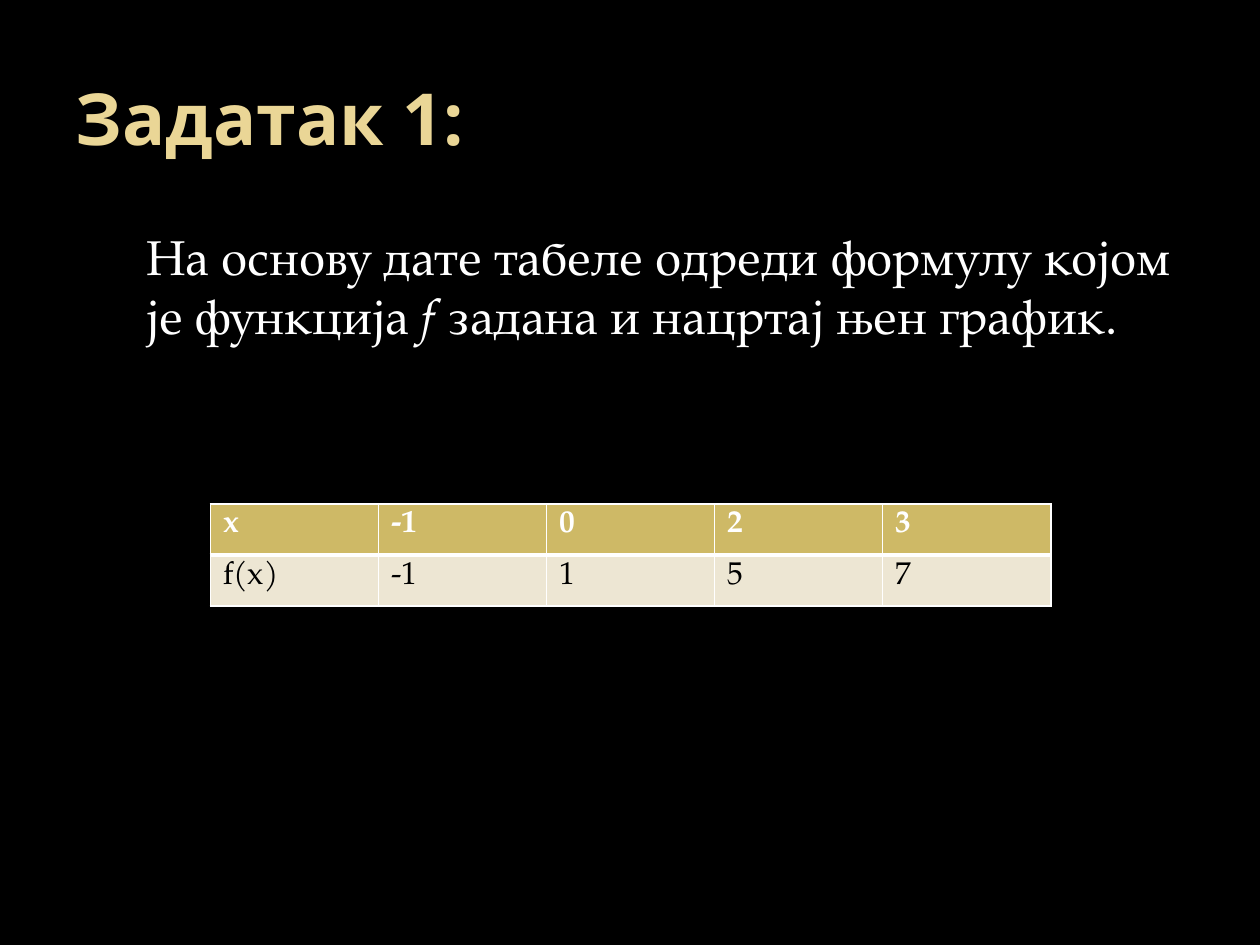
from dataclasses import dataclass

import pptx
import pptx.dml.color
import pptx.enum.text
import pptx.oxml
import pptx.oxml.ns
import pptx.util
from pptx.util import Inches


@dataclass(frozen=True)
class Theme:
    background: str = "000000"
    title: str = "EAD696"
    text: str = "FFFFFF"
    header_fill: str = "CEB966"
    row_fill: str = "EDE6D3"
    row_text: str = "000000"
    border: str = "FFFFFF"
    title_font: str = "Open Sans"
    body_font: str = "TeX Gyre Pagella"
    title_size: float = 41
    body_size: float = 28
    table_size: float = 18
    thin: float = 1
    thick: float = 3


THEME = Theme()


def rgb(value):
    return pptx.dml.color.RGBColor.from_string(value)


def add_run(p, text, font, size, color, bold=False, italic=False):
    r = p.add_run()
    r.text = text
    r.font.name = font
    r.font.size = pptx.util.Pt(size)
    r.font.color.rgb = rgb(color)
    r.font.bold = bold
    r.font.italic = italic


def place(sp, box, anchor):
    sp.left, sp.top, sp.width, sp.height = box
    tf = sp.text_frame
    tf.word_wrap = True
    tf.auto_size = pptx.enum.text.MSO_AUTO_SIZE.NONE
    tf.vertical_anchor = anchor
    p = tf.paragraphs[0]
    p.alignment = pptx.enum.text.PP_ALIGN.LEFT
    return p


def fill_title(sp, box, text):
    p = place(sp, box, pptx.enum.text.MSO_ANCHOR.MIDDLE)
    add_run(p, text, THEME.title_font, THEME.title_size, THEME.title, bold=True)


def fill_body(sp, box, parts):
    p = place(sp, box, pptx.enum.text.MSO_ANCHOR.TOP)
    p.space_before = pptx.util.Pt(0.2 * THEME.body_size)
    pPr = p._p.get_or_add_pPr()
    pPr.set("marL", str(Inches(0.56)))
    pPr.set("indent", "0")
    pPr.append(pptx.oxml.parse_xml(f'<a:buNone {pptx.oxml.ns.nsdecls("a")}/>'))
    for text, italic in parts:
        add_run(p, text, THEME.body_font, THEME.body_size, THEME.text, italic=italic)


def set_borders(cell, widths):
    tcPr = cell._tc.get_or_add_tcPr()
    for side, width in widths.items():
        tcPr.append(pptx.oxml.parse_xml(
            f'<a:ln{side} {pptx.oxml.ns.nsdecls("a")} w="{pptx.util.Pt(width)}">'
            f'<a:solidFill><a:srgbClr val="{THEME.border}"/></a:solidFill>'
            f'</a:ln{side}>'))


def add_value_table(s, box, rows):
    table = s.shapes.add_table(len(rows), len(rows[0]), *box).table
    for i, row in enumerate(rows):
        header = i == 0
        fill = THEME.header_fill if header else THEME.row_fill
        color = THEME.text if header else THEME.row_text
        widths = dict.fromkeys("LRTB", THEME.thin)
        widths["B" if header else "T"] = THEME.thick
        for j, value in enumerate(row):
            cell = table.cell(i, j)
            set_borders(cell, widths)
            cell.fill.solid()
            cell.fill.fore_color.rgb = rgb(fill)
            add_run(cell.text_frame.paragraphs[0], value, THEME.body_font,
                    THEME.table_size, color, bold=header)


def build_task_slide(prs):
    s = prs.slides.add_slide(prs.slide_layouts[1])
    s.background.fill.solid()
    s.background.fill.fore_color.rgb = rgb(THEME.background)
    fill_title(s.shapes.title,
               (Inches(0.5), Inches(0.3), Inches(9), Inches(1.25)),
               "Задатак 1:")
    fill_body(s.placeholders[1],
              (Inches(0.5), Inches(1.75), Inches(9), Inches(5.15)),
              [("На основу дате табеле одреди формулу којом је функција ", False),
               ("f ", True),
               ("задана и нацртај њен график.", False)])
    add_value_table(s, (Inches(1.67), Inches(4), Inches(6.67), Inches(0.81)),
                    [["x", "-1", "0", "2", "3"],
                     ["f(x)", "-1", "1", "5", "7"]])


def main():
    prs = pptx.Presentation()
    prs.slide_width, prs.slide_height = Inches(10), Inches(7.5)
    build_task_slide(prs)
    prs.save("out.pptx")


if __name__ == "__main__":
    main()
